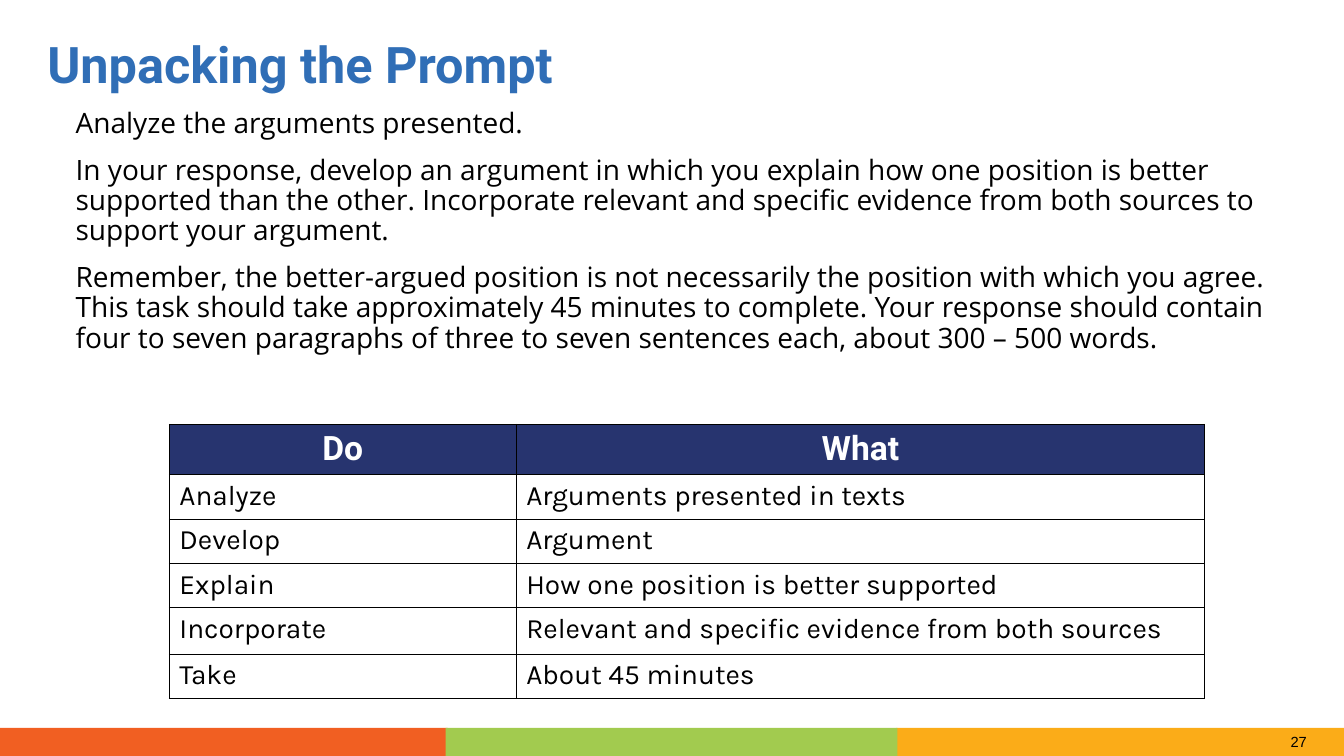
from dataclasses import dataclass

from lxml import etree
from pptx import Presentation
from pptx.dml.color import RGBColor
from pptx.enum.shapes import MSO_SHAPE
from pptx.enum.text import MSO_ANCHOR, PP_ALIGN
from pptx.oxml.ns import qn
from pptx.util import Inches, Pt

RECTANGLE = MSO_SHAPE.RECTANGLE
TOP, MIDDLE = MSO_ANCHOR.TOP, MSO_ANCHOR.MIDDLE
LEFT, CENTER = PP_ALIGN.LEFT, PP_ALIGN.CENTER
BLACK, WHITE, NAVY = "000000", "FFFFFF", "27346F"
FOOTER_TOP, FOOTER_HEIGHT = 7.22, 0.28


@dataclass(frozen=True)
class Style:
    font: str
    size: float
    color: str = BLACK
    bold: bool = False
    align: PP_ALIGN = LEFT
    line_spacing: float = 1.0
    space_before: float = 0


@dataclass(frozen=True)
class Band:
    left: float
    width: float
    color: str


@dataclass(frozen=True)
class TextBlock:
    left: float
    top: float
    width: float
    height: float
    anchor: MSO_ANCHOR
    style: Style
    paragraphs: tuple[str, ...]


TITLE = Style("Roboto", 36, "306EB6", bold=True, line_spacing=0.9)
BODY = Style("Open Sans", 20, line_spacing=0.9, space_before=12)
PAGE_NUMBER = Style("Arial", 10.5, align=CENTER)
HEADER = Style("Roboto", 24, WHITE, bold=True, align=CENTER)
TASK = Style("Karla", 20)

BANDS = (
    Band(8.89, 4.44, "FBAC18"),
    Band(0, 4.44, "F15F22"),
    Band(4.42, 4.48, "A2CB4F"),
)
TEXT_BLOCKS = (
    TextBlock(12.69, FOOTER_TOP, 0.38, FOOTER_HEIGHT, MIDDLE, PAGE_NUMBER, ("27",)),
    TextBlock(0.47, 0.43, 12.4, 0.47, MIDDLE, TITLE, ("Unpacking the Prompt",)),
    TextBlock(0.75, 1.08, 12.12, 3.14, TOP, BODY, (
        "Analyze the arguments presented.",
        "In your response, develop an argument in which you explain how one position "
        "is better supported than the other. Incorporate relevant and specific "
        "evidence from both sources to support your argument.",
        "Remember, the better-argued position is not necessarily the position with "
        "which you agree. This task should take approximately 45 minutes to complete. "
        "Your response should contain four to seven paragraphs of three to seven "
        "sentences each, about 300 – 500 words.",
    )),
)
PROMPT_ROWS = (
    ("Do", "What"),
    ("Analyze", "Arguments presented in texts"),
    ("Develop", "Argument"),
    ("Explain", "How one position is better supported"),
    ("Incorporate", "Relevant and specific evidence from both sources"),
    ("Take", "About 45 minutes"),
)
COLUMN_WIDTHS = (3.44, 6.83)
ROW_HEIGHTS = (0.44, 0.44, 0.44, 0.44, 0.46, 0.44)


def rgb(color: str) -> RGBColor:
    return RGBColor.from_string(color)


def write_paragraph(paragraph, text: str, style: Style) -> None:
    paragraph_format = {
        "alignment": style.align,
        "line_spacing": style.line_spacing,
        "space_before": Pt(style.space_before),
    }
    for name, value in paragraph_format.items():
        setattr(paragraph, name, value)
    run = paragraph.add_run()
    run.text = text
    font_format = {"name": style.font, "size": Pt(style.size), "bold": style.bold}
    for name, value in font_format.items():
        setattr(run.font, name, value)
    run.font.color.rgb = rgb(style.color)


def draw_band(slide, band: Band) -> None:
    stripe = slide.shapes.add_shape(
        RECTANGLE, Inches(band.left), Inches(FOOTER_TOP),
        Inches(band.width), Inches(FOOTER_HEIGHT))
    stripe.shadow.inherit = False
    stripe.fill.solid()
    stripe.fill.fore_color.rgb = rgb(band.color)
    stripe.line.fill.background()


def draw_text(slide, block: TextBlock) -> None:
    frame = slide.shapes.add_textbox(
        Inches(block.left), Inches(block.top),
        Inches(block.width), Inches(block.height)).text_frame
    frame_format = {
        "word_wrap": True, "vertical_anchor": block.anchor,
        "margin_left": 0, "margin_top": 0, "margin_right": 0, "margin_bottom": 0,
    }
    for name, value in frame_format.items():
        setattr(frame, name, value)
    for index, text in enumerate(block.paragraphs):
        paragraph = frame.add_paragraph() if index else frame.paragraphs[0]
        write_paragraph(paragraph, text, block.style)


def add_borders(cell) -> None:
    properties = cell._tc.get_or_add_tcPr()
    for position, side in enumerate(("a:lnL", "a:lnR", "a:lnT", "a:lnB")):
        border = etree.Element(qn(side), w=str(Pt(1)))
        fill = etree.SubElement(border, qn("a:solidFill"))
        etree.SubElement(fill, qn("a:srgbClr"), val=BLACK)
        properties.insert(position, border)


def draw_prompt_table(slide) -> None:
    table = slide.shapes.add_table(
        len(PROMPT_ROWS), len(COLUMN_WIDTHS), Inches(1.68), Inches(4.21),
        Inches(sum(COLUMN_WIDTHS)), Inches(sum(ROW_HEIGHTS))).table
    table.horz_banding = False
    for column, width in zip(table.columns, COLUMN_WIDTHS):
        column.width = Inches(width)
    for row, height in zip(table.rows, ROW_HEIGHTS):
        row.height = Inches(height)
    for row_index, texts in enumerate(PROMPT_ROWS):
        style, fill = (TASK, WHITE) if row_index else (HEADER, NAVY)
        for column_index, text in enumerate(texts):
            cell = table.cell(row_index, column_index)
            cell.fill.solid()
            cell.fill.fore_color.rgb = rgb(fill)
            write_paragraph(cell.text_frame.paragraphs[0], text, style)
            add_borders(cell)


def main() -> None:
    presentation = Presentation()
    presentation.slide_width = Inches(13.33)
    presentation.slide_height = Inches(7.5)
    slide = presentation.slides.add_slide(presentation.slide_layouts[6])
    for band in BANDS:
        draw_band(slide, band)
    for block in TEXT_BLOCKS:
        draw_text(slide, block)
    draw_prompt_table(slide)
    presentation.save("out.pptx")


if __name__ == "__main__":
    main()
